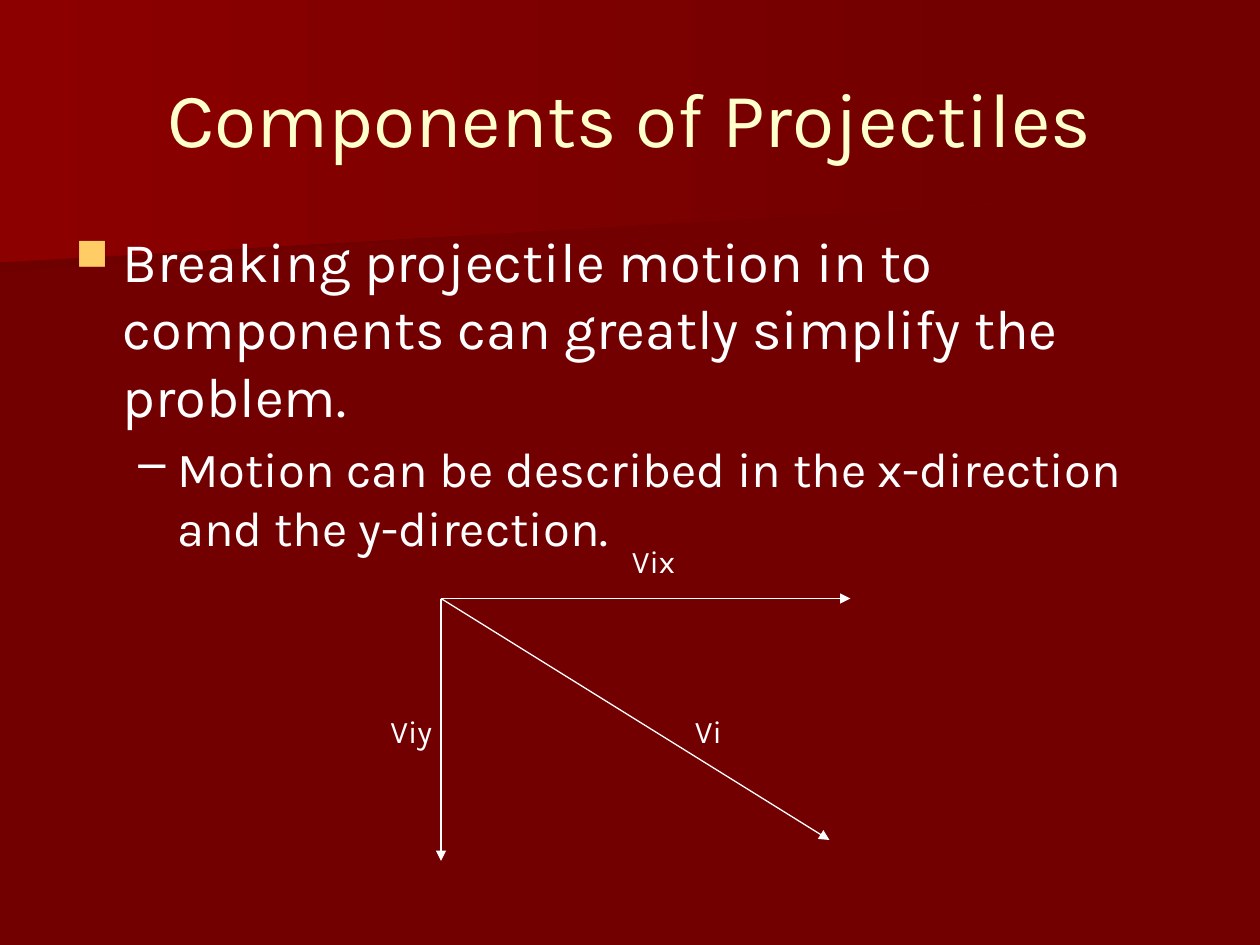
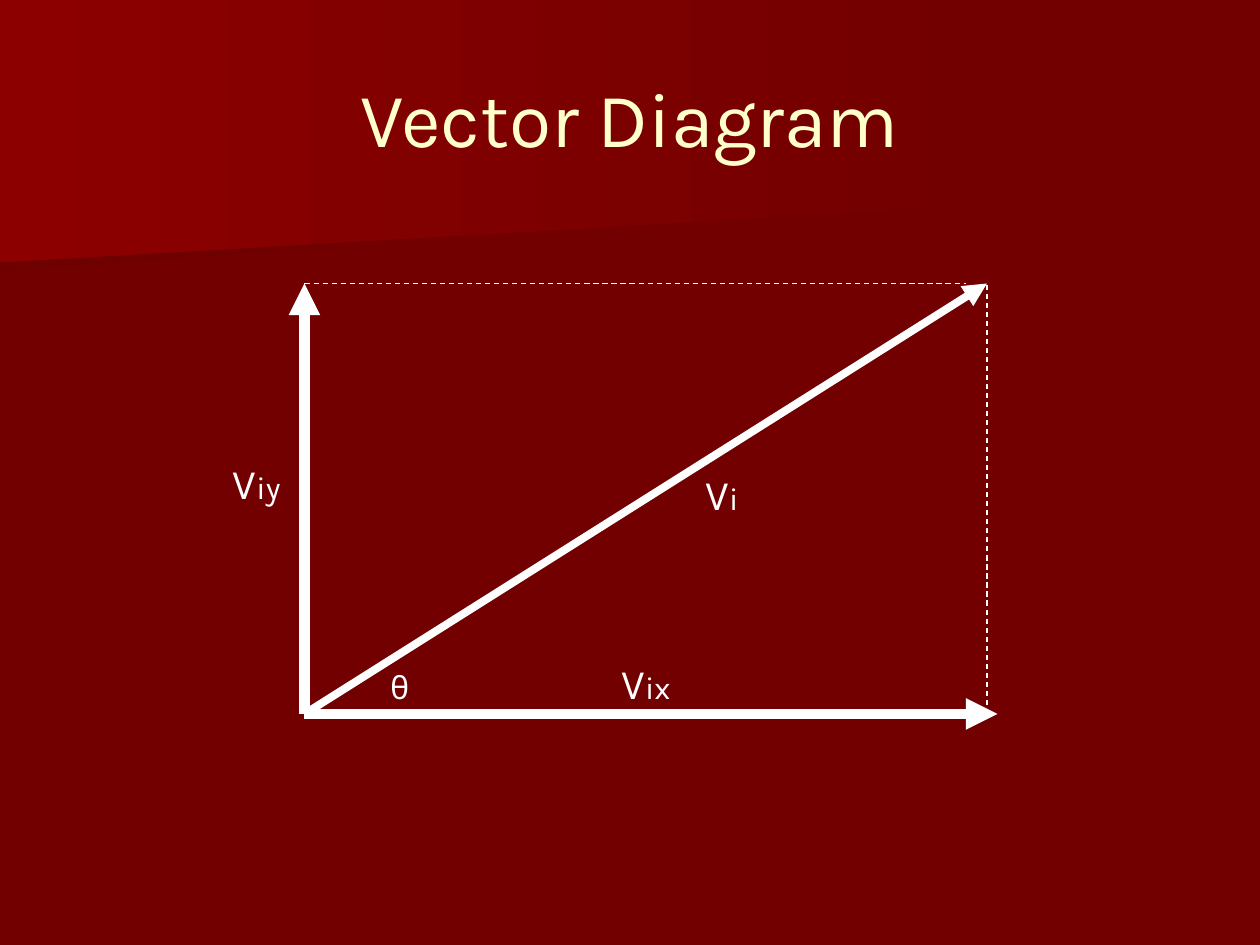
from typing import NamedTuple

from lxml.etree import SubElement
from pptx import Presentation
from pptx.dml.color import RGBColor
from pptx.enum.dml import MSO_LINE
from pptx.enum.shapes import MSO_CONNECTOR
from pptx.enum.text import MSO_ANCHOR, MSO_AUTO_SIZE, PP_ALIGN
from pptx.oxml.ns import qn
from pptx.slide import Slide
from pptx.text.text import TextFrame
from pptx.util import Pt

PX = 7620  # 120 px to the inch
FONT = "Karla"
TITLE_ONLY = 5
HEX = {
    "ground": "720000",
    "shade": "6F0000",
    "glow": "8C0000",
    "title": "FFFFCC",
    "text": "FFFFFF",
    "bullet": "FFCC66",
}

Point = tuple[int, int]


class Band(NamedTuple):
    start: str
    points: list[Point]


class Arrow(NamedTuple):
    start: Point
    end: Point
    width: float = 0.75
    dashed: bool = False


class Label(NamedTuple):
    left: int
    top: int
    width: int
    height: int
    runs: list[tuple[str, int]]


class Item(NamedTuple):
    text: str
    size: int
    mark: str
    tint: str
    scale: int
    margin: int
    hang: int


BANDS = [
    Band("shade", [(934, 184), (0, 260), (0, 121), (935, 121), (934, 154)]),
    Band("glow", [(950, 194), (0, 250), (0, 0), (950, 0)]),
]


def color(name: str) -> RGBColor:
    return RGBColor.from_string(HEX[name])


def add_run(para, text: str, size: int, tint: str = "text") -> None:
    run = para.add_run()
    run.text = text
    run.font.name = FONT
    run.font.size = Pt(size)
    run.font.color.rgb = color(tint)


def add_band(slide: Slide, band: Band) -> None:
    first, *rest = band.points
    pen = slide.shapes.build_freeform(*first, scale=PX)
    pen.add_line_segments(rest, close=True)
    shape = pen.convert_to_shape()
    shape.shadow.inherit = False
    shape.line.fill.background()
    shape.fill.gradient()
    shape.fill.gradient_angle = 0
    for stop, name in zip(shape.fill.gradient_stops, (band.start, "ground")):
        stop.color.rgb = color(name)


def add_slide(deck, text: str) -> Slide:
    """Add a slide with the shared ground, bands and title."""
    slide = deck.slides.add_slide(deck.slide_layouts[TITLE_ONLY])
    slide.background.fill.solid()
    slide.background.fill.fore_color.rgb = color("ground")
    for band in BANDS:
        add_band(slide, band)
    title = slide.shapes.title
    slide.shapes.element.append(title.element)  # bring in front of the bands
    title.left, title.top = 60 * PX, 36 * PX
    title.width, title.height = 1080 * PX, 150 * PX
    frame = title.text_frame
    frame.auto_size = MSO_AUTO_SIZE.NONE
    frame.vertical_anchor = MSO_ANCHOR.MIDDLE
    para = frame.paragraphs[0]
    para.alignment = PP_ALIGN.CENTER
    add_run(para, text, 44, "title")
    return slide


def add_arrow(slide: Slide, arrow: Arrow) -> None:
    ends = [n * PX for n in (*arrow.start, *arrow.end)]
    line = slide.shapes.add_connector(MSO_CONNECTOR.STRAIGHT, *ends)
    line.line.width = Pt(arrow.width)
    line.line.color.rgb = color("text")
    props = line.element.spPr
    if arrow.dashed:
        line.line.dash_style = MSO_LINE.DASH
    else:
        SubElement(props.find(qn("a:ln")), qn("a:tailEnd"), type="triangle")
    SubElement(props, qn("a:effectLst"))


def add_frame(slide: Slide, *box: int) -> TextFrame:
    frame = slide.shapes.add_textbox(*(n * PX for n in box)).text_frame
    frame.word_wrap = True
    return frame


def add_label(slide: Slide, label: Label) -> None:
    frame = add_frame(slide, *label[:4])
    frame.auto_size = MSO_AUTO_SIZE.SHAPE_TO_FIT_TEXT
    for text, size in label.runs:
        add_run(frame.paragraphs[0], text, size)


def add_list(slide: Slide, items: list[Item]) -> None:
    frame = add_frame(slide, 60, 210, 1080, 590)
    for i, item in enumerate(items):
        para = frame.add_paragraph() if i else frame.paragraphs[0]
        para.level = i
        if i:
            para.space_before = Pt(6)
        add_run(para, item.text, item.size)
        props = para._p.get_or_add_pPr()
        props.set("marL", str(item.margin * PX))
        props.set("indent", str(-item.hang * PX))
        tint = SubElement(props, qn("a:buClr"))
        SubElement(tint, qn("a:srgbClr"), val=HEX[item.tint])
        SubElement(props, qn("a:buSzPct"), val=str(item.scale * 1000))
        SubElement(props, qn("a:buChar"), char=item.mark)


def draw(slide: Slide, arrows: list[Arrow], labels: list[Label]) -> None:
    for arrow in arrows:
        add_arrow(slide, arrow)
    for label in labels:
        add_label(slide, label)


def add_parts(deck) -> None:
    slide = add_slide(deck, "Components of Projectiles")
    add_list(slide, [
        Item("Breaking projectile motion in to components can greatly "
             "simplify the problem.", 32, "■", "bullet", 80, 45, 45),
        Item("Motion can be described in the x-direction and the "
             "y-direction.", 28, "–", "text", 100, 97, 37),
    ])
    start = (420, 570)
    tips = [(810, 570), (420, 820), (790, 800)]
    draw(slide, [Arrow(start, tip) for tip in tips], [
        Label(590, 510, 180, 48, [("Vix", 18)]),
        Label(360, 672, 80, 48, [("Viy", 18)]),
        Label(650, 672, 280, 48, [("Vi", 18)]),
    ])


def add_vectors(deck) -> None:
    slide = add_slide(deck, "Vector Diagram")
    start, top, tip = (290, 680), (290, 270), (940, 270)
    arrows = [
        Arrow(start, top, 6),
        Arrow(start, (950, 680), 6),
        Arrow(start, tip, 4.5),
        Arrow(top, (920, 270), dashed=True),
        Arrow((940, 680), tip, dashed=True),
    ]
    draw(slide, arrows, [
        Label(580, 620, 400, 60, [("V", 24), ("ix", 18)]),
        Label(210, 430, 130, 60, [("V", 24), ("iy", 18)]),
        Label(660, 440, 380, 60, [("V", 24), ("i", 18)]),
        Label(360, 630, 100, 48, [("θ", 18)]),
    ])


def main() -> None:
    deck = Presentation()
    deck.slide_width, deck.slide_height = 1200 * PX, 900 * PX
    add_parts(deck)
    add_vectors(deck)
    deck.save("out.pptx")


if __name__ == "__main__":
    main()
